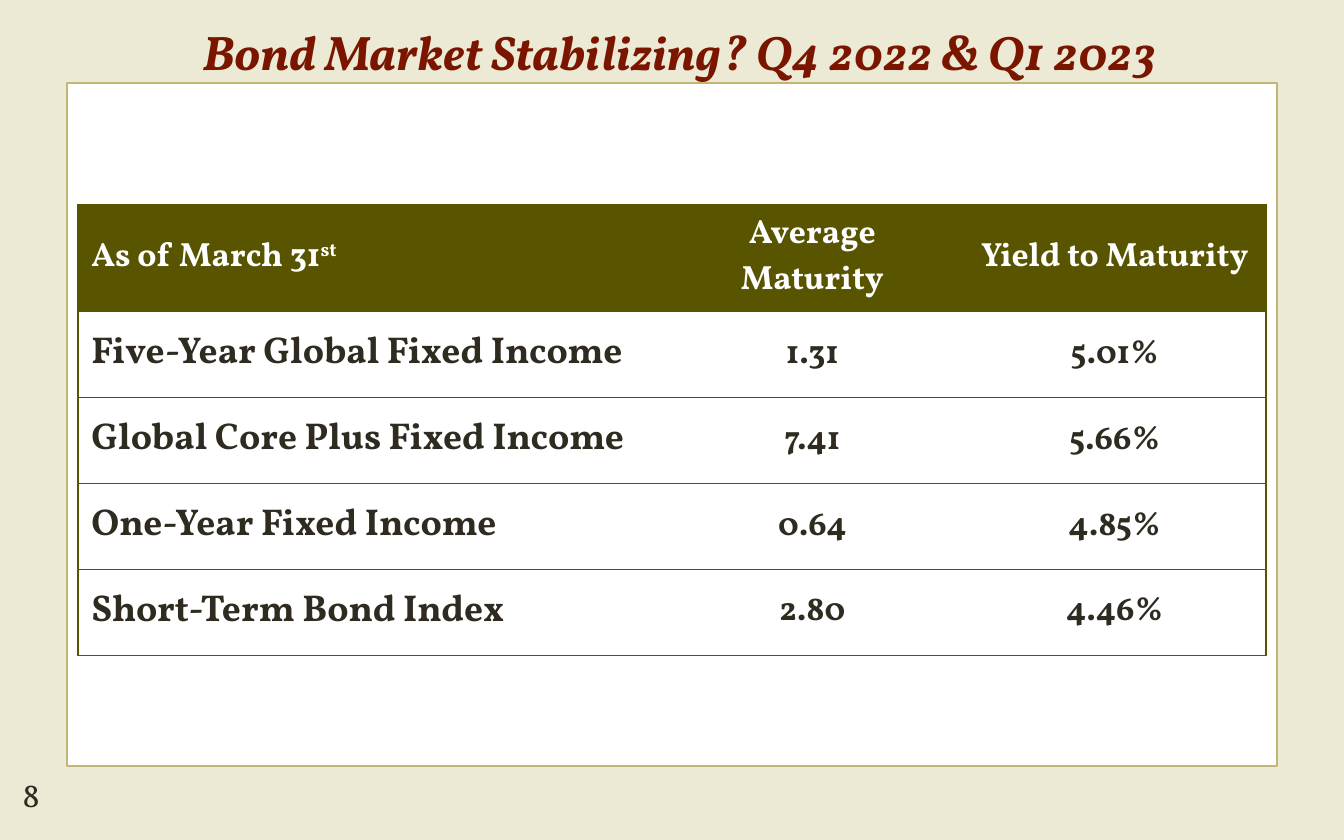
"""Build a slide with a table of bond fund maturities and yields."""
from lxml import etree
from pptx import Presentation
from pptx.dml.color import RGBColor
from pptx.enum import shapes, text
from pptx.oxml import ns
from pptx.util import Inches, Pt

TITLE = "Bond Market Stabilizing? Q4 2022 & Q1 2023"
PAGE = "8"
HEADERS = ("As of March 31", "Average Maturity", "Yield to Maturity")
ORDINAL = "st"
FUNDS = [
    ("Five-Year Global Fixed Income", "1.31", "5.01%"),
    ("Global Core Plus Fixed Income", "7.41", "5.66%"),
    ("One-Year Fixed Income", "0.64", "4.85%"),
    ("Short-Term Bond Index", "2.80", "4.46%"),
]
COLUMN_WIDTHS = (4.34, 2.25, 2.25)
ROW_HEIGHT = 0.64
THEME = {
    "font": "Vollkorn", "background": "ECEAD4", "panel": "FFFFFF",
    "panel_line": "C0B678", "title": "7A1600", "olive": "595400",
    "header": "FFFFFF", "ink": "2F2B20",
    "title_size": 26, "fund_size": 20, "body_size": 18,
}


def color(name):
    return RGBColor.from_string(THEME[name])


def style(paragraph, size, ink, bold=False, italic=False):
    font = paragraph.font
    font.name, font.size = THEME["font"], Pt(THEME[size])
    font.bold, font.italic = bold, italic
    font.color.rgb = color(ink)


def set_borders(cell, sides):
    properties = cell._tc.get_or_add_tcPr()
    for side in "LRTB":
        line = etree.SubElement(properties, ns.qn(f"a:ln{side}"), w=str(Pt(1)))
        if side in sides:
            fill = etree.SubElement(line, ns.qn("a:solidFill"))
            etree.SubElement(fill, ns.qn("a:srgbClr"), val=THEME["olive"])
        else:
            etree.SubElement(line, ns.qn("a:noFill"))


def add_panel(slide):
    panel = slide.shapes.add_shape(
        shapes.MSO_SHAPE.RECTANGLE, Inches(0.5), Inches(0.62), Inches(9), Inches(5.08))
    panel.shadow.inherit = False
    panel.fill.solid()
    panel.fill.fore_color.rgb = color("panel")
    panel.line.color.rgb = color("panel_line")
    panel.line.width = Pt(1)


def add_title(slide):
    title = slide.shapes.title
    title.left, title.top = Inches(0), Inches(0.08)
    title.width, title.height = Inches(10), Inches(0.62)
    frame = title.text_frame
    frame.text = TITLE
    frame.auto_size = text.MSO_AUTO_SIZE.NONE
    frame.vertical_anchor = text.MSO_ANCHOR.TOP
    frame.margin_left, frame.margin_top = Inches(0.22), Inches(0.08)
    heading = frame.paragraphs[0]
    heading.alignment = text.PP_ALIGN.CENTER
    style(heading, "title_size", "title", bold=True, italic=True)


def add_yields(slide):
    rows = [HEADERS, *FUNDS]
    last = len(COLUMN_WIDTHS) - 1
    yields = slide.shapes.add_table(
        len(rows), len(COLUMN_WIDTHS), Inches(0.58), Inches(1.52),
        Inches(sum(COLUMN_WIDTHS)), Inches(ROW_HEIGHT * len(rows))).table
    for column, width in zip(yields.columns, COLUMN_WIDTHS):
        column.width = Inches(width)
    for r, values in enumerate(rows):
        for c, value in enumerate(values):
            cell = yields.cell(r, c)
            cell.text = value
            cell.vertical_anchor = text.MSO_ANCHOR.MIDDLE
            set_borders(cell, "TB" + "L" * (c == 0) + "R" * (c == last))
            cell.fill.solid()
            cell.fill.fore_color.rgb = color("panel" if r else "olive")
            entry = cell.text_frame.paragraphs[0]
            entry.alignment = text.PP_ALIGN.CENTER if c else text.PP_ALIGN.LEFT
            style(entry, "fund_size" if r and not c else "body_size",
                  "ink" if r else "header", bold=True)
    ordinal = yields.cell(0, 0).text_frame.paragraphs[0].add_run()
    ordinal.text = ORDINAL
    ordinal.font._element.set("baseline", "30000")


def add_page_number(slide):
    number = slide.shapes.add_textbox(
        Inches(0.07), Inches(5.71), Inches(0.42), Inches(0.42)).text_frame
    number.word_wrap = True
    number.text = PAGE
    style(number.paragraphs[0], "body_size", "ink")


def main():
    deck = Presentation()
    deck.slide_width, deck.slide_height = Inches(10), Inches(6.25)
    slide = deck.slides.add_slide(deck.slide_layouts[5])
    slide.background.fill.solid()
    slide.background.fill.fore_color.rgb = color("background")
    add_panel(slide)
    add_title(slide)
    add_yields(slide)
    add_page_number(slide)
    deck.save("out.pptx")


if __name__ == "__main__":
    main()
